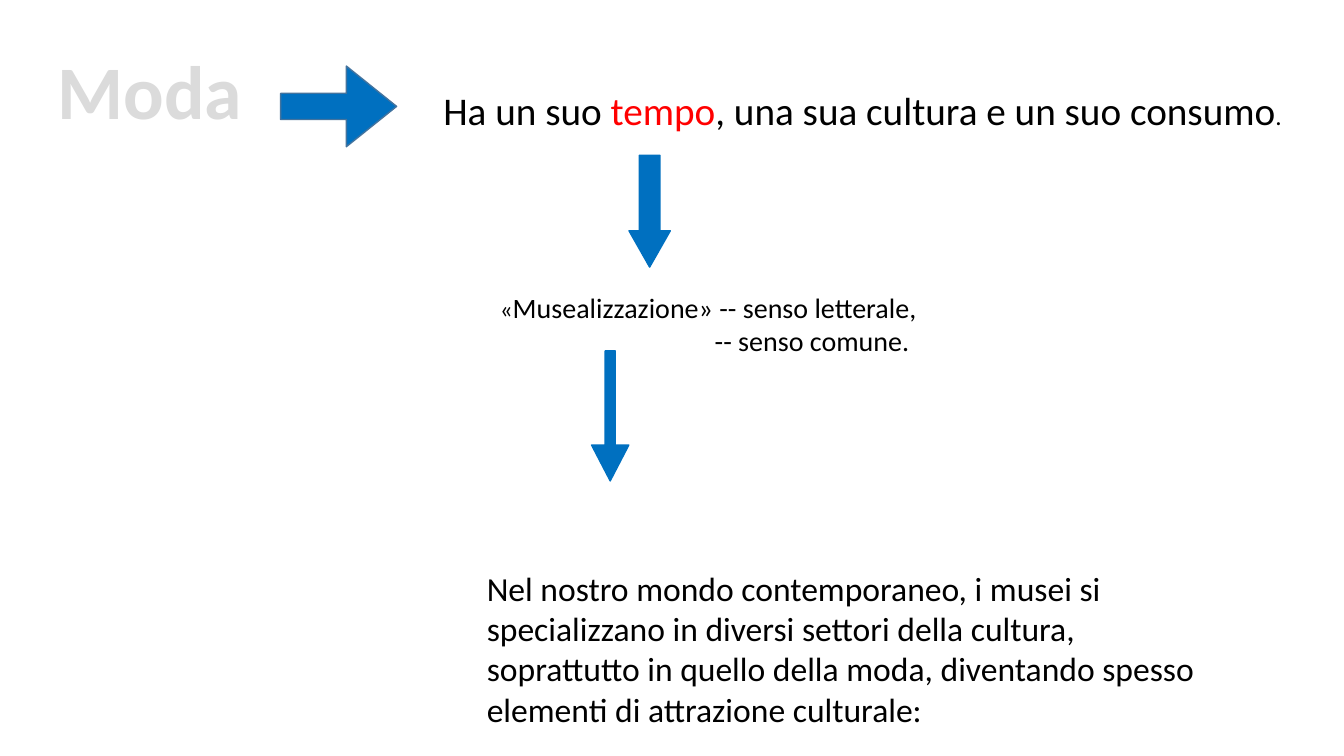
"""Build the slide on fashion, its time and its museums."""
from dataclasses import dataclass

from pptx import Presentation
from pptx.dml.color import RGBColor
from pptx.enum.shapes import MSO_SHAPE
from pptx.enum.text import MSO_ANCHOR, MSO_AUTO_SIZE, PP_ALIGN
from pptx.util import Pt

DOWN_ARROW = MSO_SHAPE.DOWN_ARROW
TOP = MSO_ANCHOR.TOP
FIXED = MSO_AUTO_SIZE.NONE
LEFT, CENTER = PP_ALIGN.LEFT, PP_ALIGN.CENTER
TITLE_ONLY = 5
FONT = "Calibri"
BLACK = RGBColor(0x00, 0x00, 0x00)
RED = RGBColor(0xFF, 0x00, 0x00)
GREY = RGBColor(0xDB, 0xDB, 0xDB)
BLUE = RGBColor(0x00, 0x70, 0xC0)
EDGE_BLUE = RGBColor(0x43, 0x73, 0x9E)


@dataclass
class Area:
    left: float
    top: float
    width: float
    height: float

    def lengths(self) -> list[Pt]:
        return [Pt(n) for n in (self.left, self.top, self.width, self.height)]


@dataclass
class Span:
    text: str
    size: float
    color: RGBColor = BLACK
    bold: bool = False


@dataclass
class Para:
    spans: list[Span]
    indent: float = 0
    align: PP_ALIGN = LEFT


@dataclass
class TextBlock:
    area: Area
    paras: list[Para]


@dataclass
class Arrow:
    area: Area
    shaft: float
    head: float
    line: RGBColor = BLUE
    rotation: float = 0


TITLE = TextBlock(
    Area(0, 27.4, 213.8, 138.2),
    [Para([Span("Moda", 54, GREY, True)], align=CENTER)],
)
BLOCKS = [
    TextBlock(Area(309.6, 58.3, 617.8, 41), [Para([
        Span("Ha un suo ", 28),
        Span("tempo", 28, RED),
        Span(", una sua cultura e un suo consumo", 28),
        Span(".", 18),
    ])]),
    TextBlock(Area(349.9, 203.8, 394.6, 55.4), [
        Para([Span("«", 18),
              Span("Musealizzazione» -- senso letterale,", 20)]),
        Para([Span("-- senso comune.", 20)], indent=153.5),
    ]),
    TextBlock(Area(340.6, 401.8, 527, 123.8), [Para([Span(
        "Nel nostro mondo contemporaneo, i musei si specializzano in diversi "
        "settori della cultura, soprattutto in quello della moda, diventando "
        "spesso elementi di attrazione culturale:", 24)])]),
]
ARROWS = [
    Arrow(Area(213.1, 34.6, 57.6, 82.8), 0.325, 0.623, EDGE_BLUE, 270),
    Arrow(Area(449.3, 110.9, 29.5, 79.9), 0.5, 0.879),
    Arrow(Area(422.6, 250.6, 26.6, 92.9), 0.269, 0.962),
]


def fill_text(box, block: TextBlock) -> None:
    box.left, box.top, box.width, box.height = block.area.lengths()
    frame = box.text_frame
    frame.word_wrap = True
    frame.auto_size = FIXED
    frame.vertical_anchor = TOP
    for index, item in enumerate(block.paras):
        para = frame.add_paragraph() if index else frame.paragraphs[0]
        para.alignment = item.align
        if item.indent:
            para._p.get_or_add_pPr().set("marL", str(int(Pt(item.indent))))
        for span in item.spans:
            run = para.add_run()
            run.text = span.text
            run.font.name = FONT
            run.font.size = Pt(span.size)
            run.font.bold = span.bold
            run.font.color.rgb = span.color


def draw_arrow(page, arrow: Arrow) -> None:
    shape = page.shapes.add_shape(DOWN_ARROW, *arrow.area.lengths())
    shape.adjustments[0] = arrow.shaft
    shape.adjustments[1] = arrow.head
    shape.rotation = arrow.rotation
    shape.shadow.inherit = False
    shape.fill.solid()
    shape.fill.fore_color.rgb = BLUE
    shape.line.color.rgb = arrow.line
    shape.line.width = Pt(1)


def main() -> None:
    deck = Presentation()
    deck.slide_width, deck.slide_height = Pt(960), Pt(540)
    page = deck.slides.add_slide(deck.slide_layouts[TITLE_ONLY])
    fill_text(page.shapes.title, TITLE)
    for block in BLOCKS:
        fill_text(page.shapes.add_textbox(*block.area.lengths()), block)
    for arrow in ARROWS:
        draw_arrow(page, arrow)
    deck.save("out.pptx")


if __name__ == "__main__":
    main()
